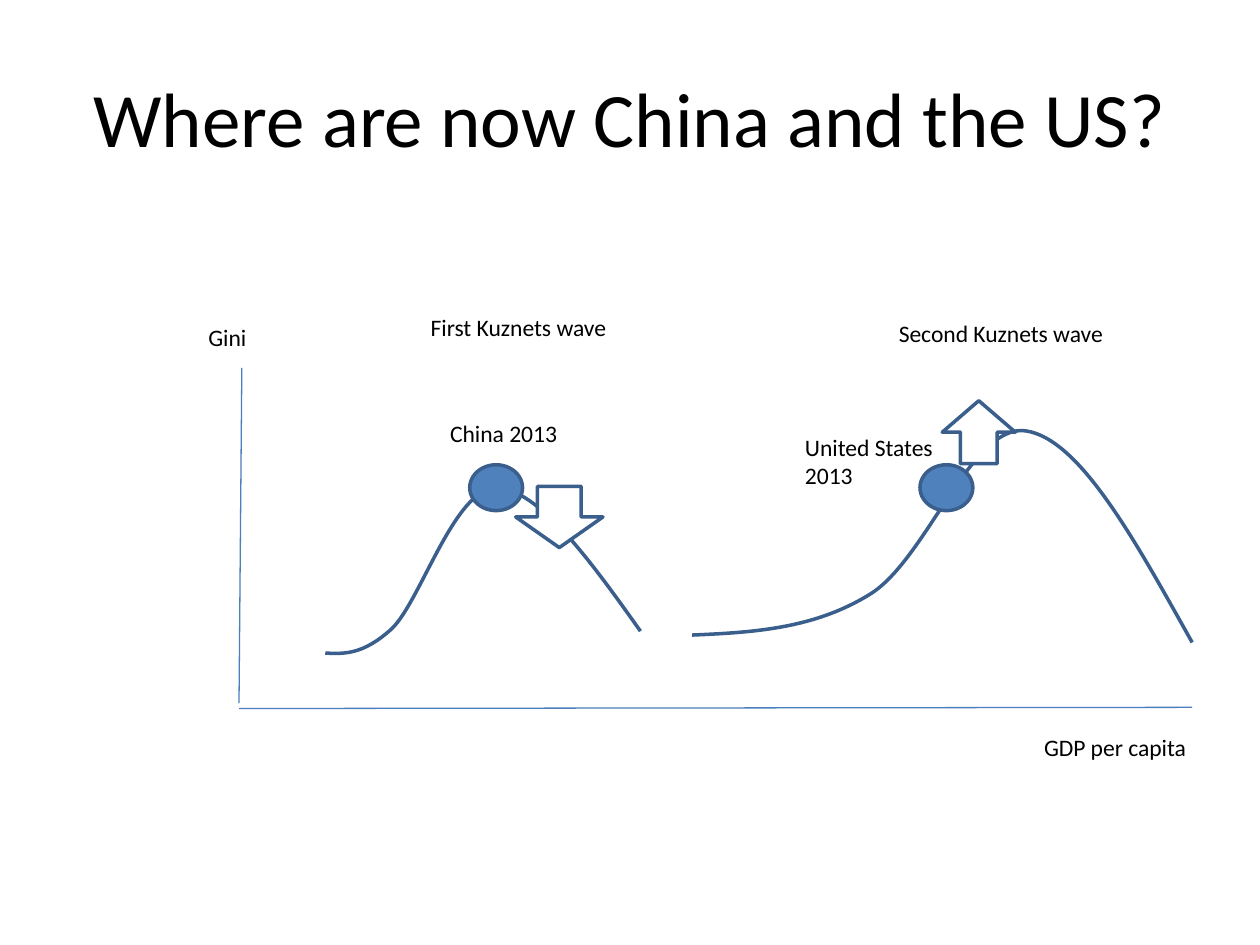
import pptx
import pptx.util
import pptx.dml.color
import pptx.enum.shapes
import pptx.enum.text
import pptx.oxml.ns
import lxml.etree

Pt = pptx.util.Pt
RGBColor = pptx.dml.color.RGBColor
Shape = pptx.enum.shapes.MSO_SHAPE
qn = pptx.oxml.ns.qn

BLACK = RGBColor(0x00, 0x00, 0x00)
WHITE = RGBColor(0xFF, 0xFF, 0xFF)
BLUE = RGBColor(0x4F, 0x81, 0xBD)
AXIS_BLUE = RGBColor(0x4B, 0x7E, 0xBC)
DARK_BLUE = RGBColor(0x3A, 0x5F, 0x8C)

FIRST_WAVE = [
    (185.9, 373.2), (196.7, 373.7), (207.5, 374.2), (223.9, 359.3),
    (240.5, 343.4), (259.9, 278.6), (283.7, 278.9),
    (307.4, 279.2), (337, 319.7), (366, 360.7),
]
SECOND_WAVE = [
    (395.5, 362.9), (430.6, 361.4), (465.1, 359.3), (496.8, 339.8),
    (529.2, 320.4), (555.1, 241.9), (586.1, 246.2),
    (617, 250.6), (648.7, 308.9), (681.3, 367.1),
]
POINT_LABELS = [
    ("China 2013", 250.1, 235.8, 94.3, 23.8),
    ("United States 2013", 452.9, 243.9, 94.3, 40.3),
    ("GDP per capita", 589.5, 415, 101.5, 23.8),
    ("Gini", 112, 180.7, 83.5, 23.8),
]
WAVE_LABELS = [
    ("First Kuznets wave", 239, 175, 126.7, 23.8),
    ("Second Kuznets wave", 506.5, 178.6, 147.6, 23.8),
]


def write_text(frame, text, size=13.5, font="Calibri", color=BLACK,
               align=pptx.enum.text.PP_ALIGN.LEFT,
               anchor=pptx.enum.text.MSO_ANCHOR.TOP):
    frame.word_wrap = True
    frame.vertical_anchor = anchor
    paragraph = frame.paragraphs[0]
    paragraph.alignment = align
    run = paragraph.add_run()
    run.text = text
    run.font.size = Pt(size)
    run.font.name = font
    run.font.color.rgb = color


class WaveSlide:
    axis_width = 0.75
    outline_width = 2

    def __init__(self, presentation):
        self.slide = presentation.slides.add_slide(presentation.slide_layouts[5])
        self.shapes = self.slide.shapes

    def title(self, text, left, top, width, height):
        shape = self.shapes.title
        shape.left, shape.top = Pt(left), Pt(top)
        shape.width, shape.height = Pt(width), Pt(height)
        write_text(shape.text_frame, text, size=44,
                   align=pptx.enum.text.PP_ALIGN.CENTER,
                   anchor=pptx.enum.text.MSO_ANCHOR.MIDDLE)

    def label(self, text, left, top, width, height):
        box = self.shapes.add_textbox(Pt(left), Pt(top), Pt(width), Pt(height))
        write_text(box.text_frame, text)
        box.text_frame.auto_size = pptx.enum.text.MSO_AUTO_SIZE.SHAPE_TO_FIT_TEXT

    def axis(self, x1, y1, x2, y2):
        connector = self.shapes.add_connector(
            pptx.enum.shapes.MSO_CONNECTOR.STRAIGHT, Pt(x1), Pt(y1), Pt(x2), Pt(y2))
        connector.line.color.rgb = AXIS_BLUE
        connector.line.width = Pt(self.axis_width)
        lxml.etree.SubElement(connector._element.spPr, qn("a:effectLst"))

    def outline(self, shape):
        shape.shadow.inherit = False
        shape.line.color.rgb = DARK_BLUE
        shape.line.width = Pt(self.outline_width)

    def curve(self, nodes):
        start, *others = [(Pt(x), Pt(y)) for x, y in nodes]
        builder = self.shapes.build_freeform(*start)
        builder.add_line_segments(others, close=False)
        shape = builder.convert_to_shape()
        segments = list(shape._element.iter(qn("a:lnTo")))
        for first in range(0, len(segments), 3):
            bezier = lxml.etree.Element(qn("a:cubicBezTo"))
            segments[first].addprevious(bezier)
            for segment in segments[first:first + 3]:
                bezier.append(segment[0])
                segment.getparent().remove(segment)
        shape.fill.background()
        self.outline(shape)

    def marker(self, kind, left, top, width, height, fill=WHITE):
        shape = self.shapes.add_shape(kind, Pt(left), Pt(top), Pt(width), Pt(height))
        shape.fill.solid()
        shape.fill.fore_color.rgb = fill
        self.outline(shape)


def main():
    presentation = pptx.Presentation()
    presentation.slide_width = Pt(720)
    presentation.slide_height = Pt(540)
    slide = WaveSlide(presentation)
    slide.title("Where are now China and the US?", 36, 21.6, 648, 90)
    slide.axis(136.6, 401.8, 138.2, 210.2)
    for wave in (FIRST_WAVE, SECOND_WAVE):
        slide.curve(wave)
    slide.axis(136.6, 404.9, 681.3, 404.2)
    for left in (268.4, 525.7):
        slide.marker(Shape.OVAL, left, 265.6, 30.2, 26.2, fill=BLUE)
    for label in POINT_LABELS:
        slide.label(*label)
    slide.marker(Shape.DOWN_ARROW, 294.7, 277.9, 49.9, 35)
    slide.marker(Shape.UP_ARROW, 538.4, 229, 41.8, 36)
    for label in WAVE_LABELS:
        slide.label(*label)
    presentation.save("out.pptx")


if __name__ == "__main__":
    main()
